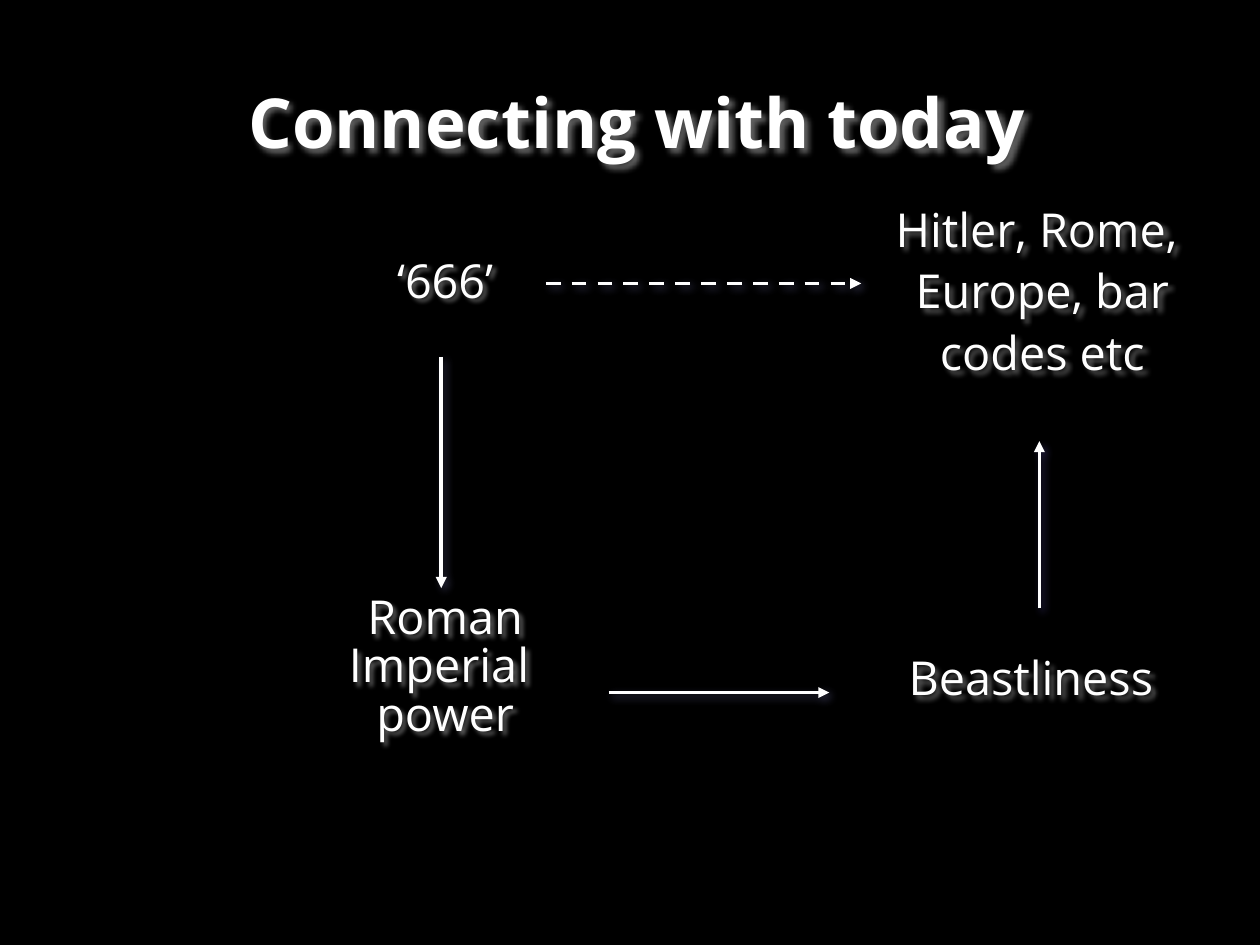
from lxml.etree import SubElement
from pptx import Presentation
from pptx.dml.color import RGBColor
from pptx.enum.dml import MSO_LINE
from pptx.enum.shapes import MSO_CONNECTOR
from pptx.enum.text import MSO_ANCHOR, MSO_AUTO_SIZE, PP_ALIGN
from pptx.oxml.ns import qn
from pptx.util import Inches, Pt

FONT = "Open Sans"
WHITE = "FFFFFF"


def paint(target, color):
    target.rgb = RGBColor.from_string(color)


def shade(shape, color, blur):
    """Cast a soft shadow down and to the right."""
    effects = SubElement(shape._element.spPr, qn("a:effectLst"))
    cast = SubElement(effects, qn("a:outerShdw"), blurRad=str(Pt(blur)),
                      dist=str(Pt(4)), dir="2700000", algn="ctr", rotWithShape="0")
    tint = SubElement(cast, qn("a:srgbClr"), val=color)
    SubElement(tint, qn("a:alpha"), val="75000")


def place(shape, box, anchor):
    shape.left, shape.top, shape.width, shape.height = map(Inches, box)
    shade(shape, "808080", 4)
    frame = shape.text_frame
    frame.word_wrap = True
    frame.auto_size = MSO_AUTO_SIZE.NONE
    frame.vertical_anchor = anchor
    frame.margin_left = frame.margin_right = Inches(0.07)
    frame.margin_top = frame.margin_bottom = Inches(0.07)
    return frame


def write(para, text, size, bold=False):
    run = para.add_run()
    run.text = text
    run.font.name = FONT
    run.font.size = Pt(size)
    run.font.bold = bold
    paint(run.font.color, WHITE)


def add_title(shape, box):
    para = place(shape, box, MSO_ANCHOR.BOTTOM).paragraphs[0]
    para.alignment = PP_ALIGN.LEFT
    para.line_spacing = 1.0
    write(para, "Connecting with today", 56, True)


def add_column(shape, box, items, margin=0):
    """Items are (text, line spacing, points before, first-line indent)."""
    frame = place(shape, box, MSO_ANCHOR.TOP)
    for i, (text, lines, before, indent) in enumerate(items):
        para = frame.add_paragraph() if i else frame.paragraphs[0]
        para.alignment = PP_ALIGN.CENTER
        para.line_spacing = lines
        para.space_before = Pt(before)
        props = para._p.get_or_add_pPr()
        props.set("marL", str(Inches(margin)))
        props.set("indent", str(Inches(indent)))
        SubElement(props, qn("a:buNone"))
        write(para, text, 38)


def add_arrow(slide, start, end, dashed=False, glow="3E3E5C"):
    arrow = slide.shapes.add_connector(
        MSO_CONNECTOR.STRAIGHT, *map(Inches, start + end))
    arrow.line.width = Pt(3)
    paint(arrow.line.color, WHITE)
    if dashed:
        arrow.line.dash_style = MSO_LINE.DASH
    SubElement(arrow.line._get_or_add_ln(), qn("a:tailEnd"), type="triangle")
    shade(arrow, glow, 7)


def main():
    deck = Presentation()
    deck.slide_width, deck.slide_height = Inches(14.22), Inches(10.67)
    slide = deck.slides.add_slide(deck.slide_layouts[1])
    slide.background.fill.solid()
    paint(slide.background.fill.fore_color, "000000")

    add_title(slide.shapes.title, (2.73, 0.24, 11.14, 1.66))
    add_column(slide.placeholders[1], (2.73, 2.85, 4.59, 6.63), [
        ("‘666’", 0.9, 0, 0),
        ("Roman", 0.9, 232, 0),
        ("Imperial ", 0.6, 9, 0),
        ("power", 0.6, 12, 0),
    ])
    right = slide.shapes.add_textbox(0, 0, 0, 0)
    add_column(right, (9.13, 2.13, 4.74, 5.82), [
        ("Hitler, Rome, Europe, bar codes etc", 1.1, 9, -0.13),
        ("Beastliness", 1.1, 214, -0.26),
    ], margin=0.53)

    add_arrow(slide, (6.16, 3.2), (9.72, 3.2), dashed=True)
    add_arrow(slide, (4.98, 4.03), (4.98, 6.64))
    add_arrow(slide, (6.87, 7.82), (9.36, 7.82))
    add_arrow(slide, (11.73, 6.87), (11.73, 4.98), glow="353062")
    deck.save("out.pptx")


if __name__ == "__main__":
    main()
